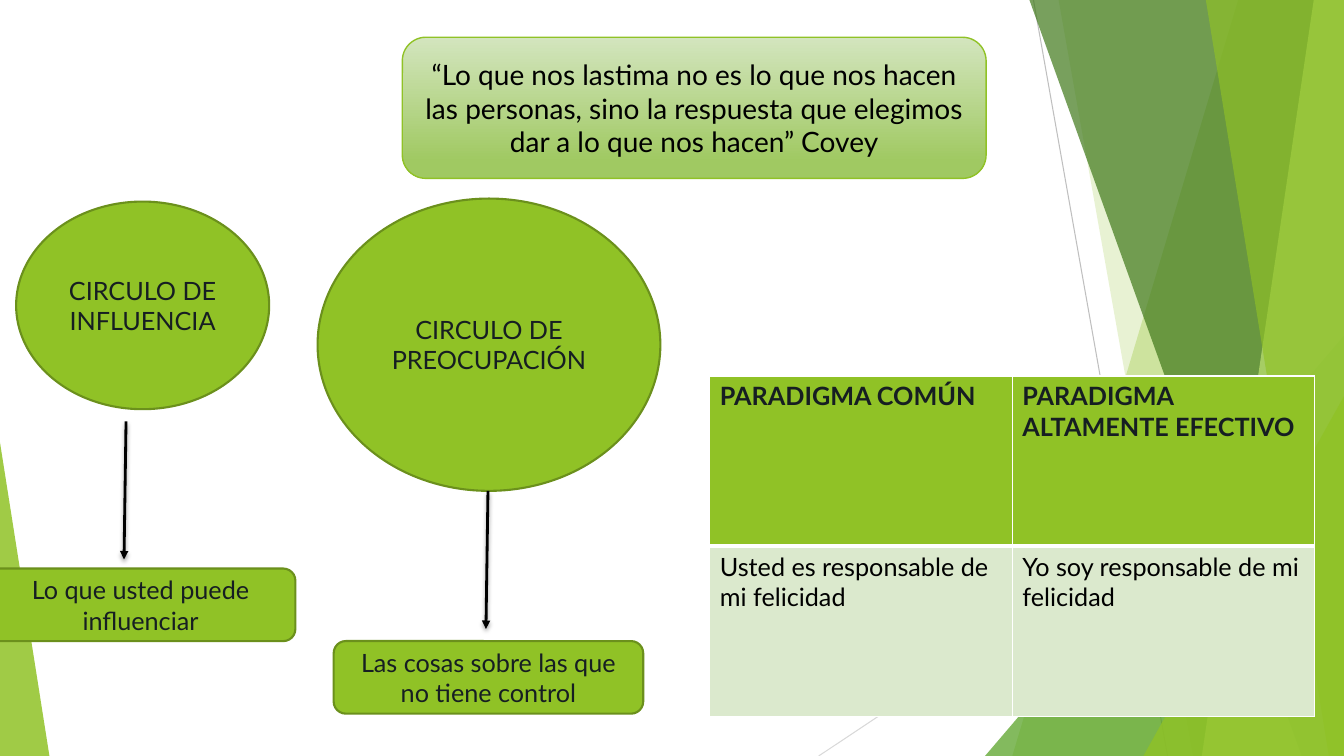
from dataclasses import dataclass
from typing import Any

import pptx
import pptx.dml.color
import pptx.enum.dml
import pptx.enum.shapes
import pptx.enum.text
import pptx.oxml
import pptx.oxml.ns
import pptx.util
from pptx.util import Inches

SLIDE_W, SLIDE_H = 13.33, 7.5
COLORS = {
    "green": "90C226", "outline": "6B901C", "leaf": "54A021", "forest": "3F7819",
    "lime": "C0E474", "pale": "DBE9CD", "quote_top": "D3E5BE", "quote_bottom": "A0C962",
    "ink": "161E22", "black": "000000", "white": "FFFFFF", "gray": "BFBFBF", "light_gray": "D9D9D9",
}
NS = 'xmlns:a="http://schemas.openxmlformats.org/drawingml/2006/main"'
PRESET = pptx.enum.shapes.MSO_SHAPE
ALIGN = pptx.enum.text.PP_ALIGN
ANCHOR = pptx.enum.text.MSO_ANCHOR


@dataclass
class Facet:
    """Translucent band running from the top edge to the bottom edge."""
    top_x: float
    bottom_x: float
    color: str
    alpha: int


@dataclass
class Corner:
    """Translucent triangle standing on the bottom edge."""
    left: float
    top: float
    width: float
    apex: float
    color: str
    alpha: int


@dataclass
class Bubble:
    preset: Any
    left: float
    top: float
    width: float
    height: float
    text: str


@dataclass
class Line:
    x1: float
    y1: float
    x2: float
    y2: float
    color: str
    width: float


BACK_LINES = [
    Line(10.25, 0, 11.58, SLIDE_H, "gray", 0.75),
    Line(SLIDE_W, 4.03, 8.12, SLIDE_H, "light_gray", 0.75),
]
BACKDROP = [
    Facet(12.28, 10.04, "green", 30),
    Facet(10.5, 11.83, "green", 20),
    Corner(9.77, 3.33, 3.56, 1, "leaf", 72),
    Facet(10.21, 12.91, "forest", 70),
    Facet(13.03, 11.92, "lime", 70),
    Facet(11.96, 13.18, "green", 65),
    Corner(11.34, 3.93, 1.99, 1, "green", 80),
    Corner(0, 4.39, 0.49, 0, "green", 85),
]
QUOTE = Bubble(
    PRESET.ROUNDED_RECTANGLE, 3.99, 0.37, 5.79, 1.4,
    "“Lo que nos lastima no es lo que nos hacen las personas, sino la respuesta "
    "que elegimos dar a lo que nos hacen” Covey")
BUBBLES = [
    Bubble(PRESET.FLOWCHART_CONNECTOR, 0.16, 2, 2.51, 2.06, "CIRCULO DE INFLUENCIA"),
    Bubble(PRESET.FLOWCHART_CONNECTOR, 3.15, 1.97, 3.4, 2.9, "CIRCULO DE PREOCUPACIÓN"),
    Bubble(PRESET.ROUNDED_RECTANGLE, -0.14, 5.64, 3.07, 0.72, "Lo que usted puede influenciar"),
    Bubble(PRESET.ROUNDED_RECTANGLE, 3.31, 6.36, 3.07, 0.72,
           "Las cosas sobre las que no tiene control"),
]
ARROWS = [
    Line(1.25, 4.18, 1.23, 5.55, "black", 2),
    Line(4.84, 4.87, 4.82, 6.24, "black", 2),
]
PARADIGMS = [
    ["PARADIGMA COMÚN", "PARADIGMA ALTAMENTE EFECTIVO"],
    ["Usted es responsable de mi felicidad", "Yo soy responsable de mi felicidad"],
]


def rgb(name: str) -> pptx.dml.color.RGBColor:
    return pptx.dml.color.RGBColor.from_string(COLORS[name])


def apply(target: Any, values: dict[str, Any]) -> None:
    for name, value in values.items():
        setattr(target, name, value)


def write(frame: Any, text: str, align: Any, size: float, color: str, bold: bool = False) -> None:
    frame.word_wrap = True
    paragraph = frame.paragraphs[0]
    paragraph.alignment = align
    run = paragraph.add_run()
    run.text = text
    apply(run.font, {"name": "Lato", "size": pptx.util.Pt(size), "bold": bold})
    run.font.color.rgb = rgb(color)


def draw_backdrop(slide: Any, part: Facet | Corner) -> None:
    if isinstance(part, Facet):
        builder = slide.shapes.build_freeform(Inches(part.top_x), 0)
        corners = [(SLIDE_W, 0), (SLIDE_W, SLIDE_H), (part.bottom_x, SLIDE_H)]
        builder.add_line_segments([(Inches(x), Inches(y)) for x, y in corners], close=True)
        shape = builder.convert_to_shape()
    else:
        shape = slide.shapes.add_shape(
            PRESET.ISOSCELES_TRIANGLE, Inches(part.left), Inches(part.top),
            Inches(part.width), Inches(SLIDE_H - part.top))
        shape.adjustments[0] = part.apex
    shape.shadow.inherit = False
    shape.line.fill.background()
    shape.fill.solid()
    shape.fill.fore_color.rgb = rgb(part.color)
    color = shape.fill._xPr.find(".//" + pptx.oxml.ns.qn("a:srgbClr"))
    color.append(pptx.oxml.parse_xml(f'<a:alpha {NS} val="{part.alpha * 1000}"/>'))


def draw_bubble(slide: Any, bubble: Bubble, size: float, text_color: str,
                outline: str, outline_width: float) -> Any:
    shape = slide.shapes.add_shape(bubble.preset, Inches(bubble.left), Inches(bubble.top),
                                   Inches(bubble.width), Inches(bubble.height))
    shape.shadow.inherit = False
    shape.fill.solid()
    shape.fill.fore_color.rgb = rgb("green")
    shape.line.color.rgb = rgb(outline)
    shape.line.width = pptx.util.Pt(outline_width)
    shape.text_frame.vertical_anchor = ANCHOR.MIDDLE
    write(shape.text_frame, bubble.text, ALIGN.CENTER, size, text_color)
    return shape


def draw_line(slide: Any, line: Line, arrow: bool = False) -> None:
    connector = slide.shapes.add_connector(
        pptx.enum.shapes.MSO_CONNECTOR.STRAIGHT,
        Inches(line.x1), Inches(line.y1), Inches(line.x2), Inches(line.y2))
    connector.line.color.rgb = rgb(line.color)
    connector.line.width = pptx.util.Pt(line.width)
    shadow = ""
    if arrow:
        connector.line._get_or_add_ln().append(
            pptx.oxml.parse_xml(f'<a:tailEnd {NS} type="triangle"/>'))
        shadow = ('<a:outerShdw blurRad="38100" dist="25400" dir="5400000" rotWithShape="0">'
                  f'<a:srgbClr val="{COLORS["black"]}"><a:alpha val="35000"/></a:srgbClr>'
                  '</a:outerShdw>')
    connector._element.spPr.append(
        pptx.oxml.parse_xml(f"<a:effectLst {NS}>{shadow}</a:effectLst>"))


def set_borders(cell: Any, widths: dict[str, float]) -> None:
    properties = cell._tc.get_or_add_tcPr()
    for index, (side, width) in enumerate(widths.items()):
        properties.insert(index, pptx.oxml.parse_xml(
            f'<a:ln{side} {NS} w="{pptx.util.Pt(width)}"><a:solidFill>'
            f'<a:srgbClr val="{COLORS["white"]}"/></a:solidFill></a:ln{side}>'))


def draw_paradigms(slide: Any) -> None:
    table = slide.shapes.add_table(2, 2, Inches(7.04), Inches(3.73), Inches(6), Inches(3.38)).table
    for r, texts in enumerate(PARADIGMS):
        header = r == 0
        for c, text in enumerate(texts):
            cell = table.cell(r, c)
            cell.fill.solid()
            cell.fill.fore_color.rgb = rgb("green" if header else "pale")
            write(cell.text_frame, text, ALIGN.LEFT, 18, "ink" if header else "black", header)
            set_borders(cell, {"L": 1, "R": 1, "T": 1 if header else 3, "B": 3 if header else 1})


def main() -> None:
    deck = pptx.Presentation()
    apply(deck, {"slide_width": Inches(SLIDE_W), "slide_height": Inches(SLIDE_H)})
    slide = deck.slides.add_slide(deck.slide_layouts[6])

    # Faceted backdrop
    for line in BACK_LINES:
        draw_line(slide, line)
    for part in BACKDROP:
        draw_backdrop(slide, part)

    # Quote with a gradient from top to bottom
    quote = draw_bubble(slide, QUOTE, 20, "black", "green", 1)
    quote.fill.gradient()
    quote.fill.gradient_angle = 270
    for stop, color, position in zip(quote.fill.gradient_stops,
                                     ("quote_top", "quote_bottom"), (0, 0.88)):
        stop.color.rgb = rgb(color)
        stop.position = position

    # Circles, their explanations and arrows
    for bubble in BUBBLES:
        draw_bubble(slide, bubble, 18, "ink", "outline", 1.5)
    for arrow in ARROWS:
        draw_line(slide, arrow, arrow=True)

    # Table of paradigms
    draw_paradigms(slide)
    deck.save("out.pptx")


if __name__ == "__main__":
    main()
